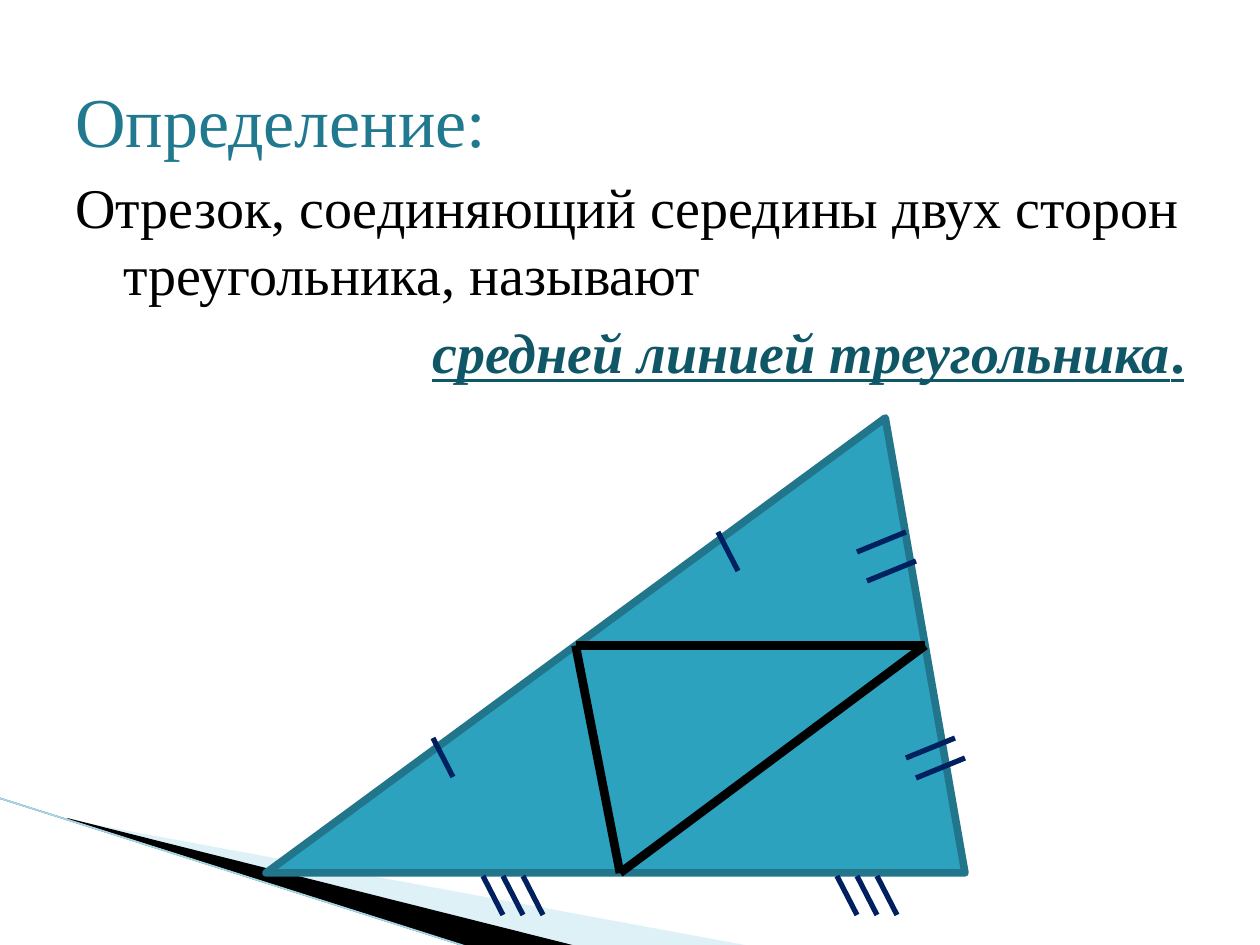
from lxml.etree import SubElement
from pptx import Presentation
from pptx.dml.color import RGBColor
from pptx.enum.shapes import MSO_CONNECTOR, MSO_SHAPE
from pptx.enum.text import PP_ALIGN
from pptx.oxml.ns import qn
from pptx.util import Pt

EMU_PER_PX = 914400 / 126

BLACK = RGBColor(0x00, 0x00, 0x00)
PALE_TEAL = RGBColor(0xAB, 0xDE, 0xEA)
EDGE_BLUE = RGBColor(0xA3, 0xD9, 0xE7)
HEADING_TEAL = RGBColor(0x21, 0x79, 0x8F)
TERM_TEAL = RGBColor(0x0F, 0x56, 0x66)
TRIANGLE_FILL = RGBColor(0x2D, 0xA2, 0xBF)
TRIANGLE_EDGE = RGBColor(0x21, 0x76, 0x8C)
TICK_NAVY = RGBColor(0x00, 0x20, 0x60)

FONT = "Times New Roman"
HANGING_INDENT = 48


def px(length):
    return round(length * EMU_PER_PX)


def add_line(slide, start, end, color, width):
    line = slide.shapes.add_connector(
        MSO_CONNECTOR.STRAIGHT, *(px(value) for value in (*start, *end)))
    line.line.color.rgb = color
    line.line.width = Pt(width)
    SubElement(line._element.spPr, qn("a:effectLst"))


def add_wedge(slide, origin, points, color, opacity=100):
    left, top = origin
    corners = [(left + x, top + y) for x, y in points]
    builder = slide.shapes.build_freeform(*corners[0], scale=EMU_PER_PX)
    builder.add_line_segments(corners[1:], close=True)
    wedge = builder.convert_to_shape()
    wedge.shadow.inherit = False
    wedge.fill.solid()
    wedge.fill.fore_color.rgb = color
    wedge.line.fill.background()
    if opacity < 100:
        rgb = wedge._element.spPr.find(qn("a:solidFill"))[0]
        SubElement(rgb, qn("a:alpha"), val=str(opacity * 1000))


def add_corner_decoration(slide, left, top, width, height):
    """Sweeping wedges in the lower left corner."""
    origin = (left, top)
    add_wedge(slide, origin, [(70, 22), (751, 148), (576, 148), (70, 21)],
              PALE_TEAL, opacity=40)
    add_wedge(slide, origin, [(68, 20), (577, 148), (470, 149), (69, 21)], BLACK)
    corner = slide.shapes.add_shape(
        MSO_SHAPE.RIGHT_TRIANGLE, px(left), px(top), px(width), px(height))
    corner.shadow.inherit = False
    corner.fill.background()
    corner.line.color.rgb = BLACK
    corner.line.width = Pt(0.75)
    add_line(slide, origin, (left + width, top + height), EDGE_BLUE, 0.95)


def add_definition(slide, left, top, width, height):
    frame = slide.shapes.add_textbox(
        px(left), px(top), px(width), px(height)).text_frame
    frame.word_wrap = True
    frame.text = ("Определение:\n"
                  "Отрезок, соединяющий середины двух сторон треугольника, называют\n"
                  "средней линией треугольника")
    heading, statement, term = frame.paragraphs
    term.add_run().text = "."
    term.alignment = PP_ALIGN.RIGHT

    for paragraph, size, spacing, color in (
            (heading, 40, 49.4, HEADING_TEAL),
            (statement, 32, 38.3, BLACK),
            (term, 32, 38.3, TERM_TEAL)):
        properties = paragraph._p.get_or_add_pPr()
        properties.set("marL", str(px(HANGING_INDENT)))
        properties.set("indent", str(-px(HANGING_INDENT)))
        paragraph.line_spacing = Pt(spacing)
        if paragraph is not heading:
            paragraph.space_before = Pt(6.4)
        for run in paragraph.runs:
            run.font.name = FONT
            run.font.size = Pt(size)
            run.font.color.rgb = color

    phrase, full_stop = term.runs
    for run in (phrase, full_stop):
        run.font.bold = True
        run.font.underline = True
    phrase.font.italic = True


def add_ticks(slide, first, stroke, step, count):
    """Parallel equality marks, each shifted from the last by step."""
    for index in range(count):
        x = first[0] + index * step[0]
        y = first[1] + index * step[1]
        add_line(slide, (x, y), (x + stroke[0], y + stroke[1]), TICK_NAVY, 3)


def add_triangle_figure(slide, left, top, width, height, apex=0.886):
    """Triangle with its three midlines and the marks of equal halves."""
    triangle = slide.shapes.add_shape(
        MSO_SHAPE.ISOSCELES_TRIANGLE, px(left), px(top), px(width), px(height))
    triangle.adjustments[0] = apex
    triangle.shadow.inherit = False
    triangle.fill.solid()
    triangle.fill.fore_color.rgb = TRIANGLE_FILL
    triangle.line.color.rgb = TRIANGLE_EDGE
    triangle.line.width = Pt(4.33)

    middle = top + height / 2
    left_midpoint = (left + width * apex / 2, middle)
    right_midpoint = (left + width * (1 + apex) / 2, middle)
    base_midpoint = (left + 354, top + height)
    for start, end in ((left_midpoint, right_midpoint),
                       (right_midpoint, base_midpoint),
                       (left_midpoint, base_midpoint)):
        add_line(slide, start, end, BLACK, 5)

    steep, shallow = (20, 39), (-49, 20)
    for x, y, stroke, step, count in (
            (452, 114, steep, (0, 0), 1),
            (167, 320, steep, (0, 0), 1),
            (640, 114, shallow, (10, 29), 2),
            (689, 320, shallow, (10, 20), 2),
            (217, 458, steep, (20, 0), 3),
            (571, 458, steep, (20, 0), 3)):
        add_ticks(slide, (left + x, top + y), stroke, step, count)


def main():
    presentation = Presentation()
    presentation.slide_width = px(1260)
    presentation.slide_height = px(945)
    slide = presentation.slides.add_slide(presentation.slide_layouts[6])
    add_corner_decoration(slide, -1, 798, 469, 149)
    add_definition(slide, 63, 69, 1134, 775)
    add_triangle_figure(slide, 266, 418, 699, 455)
    presentation.save("out.pptx")


if __name__ == "__main__":
    main()
